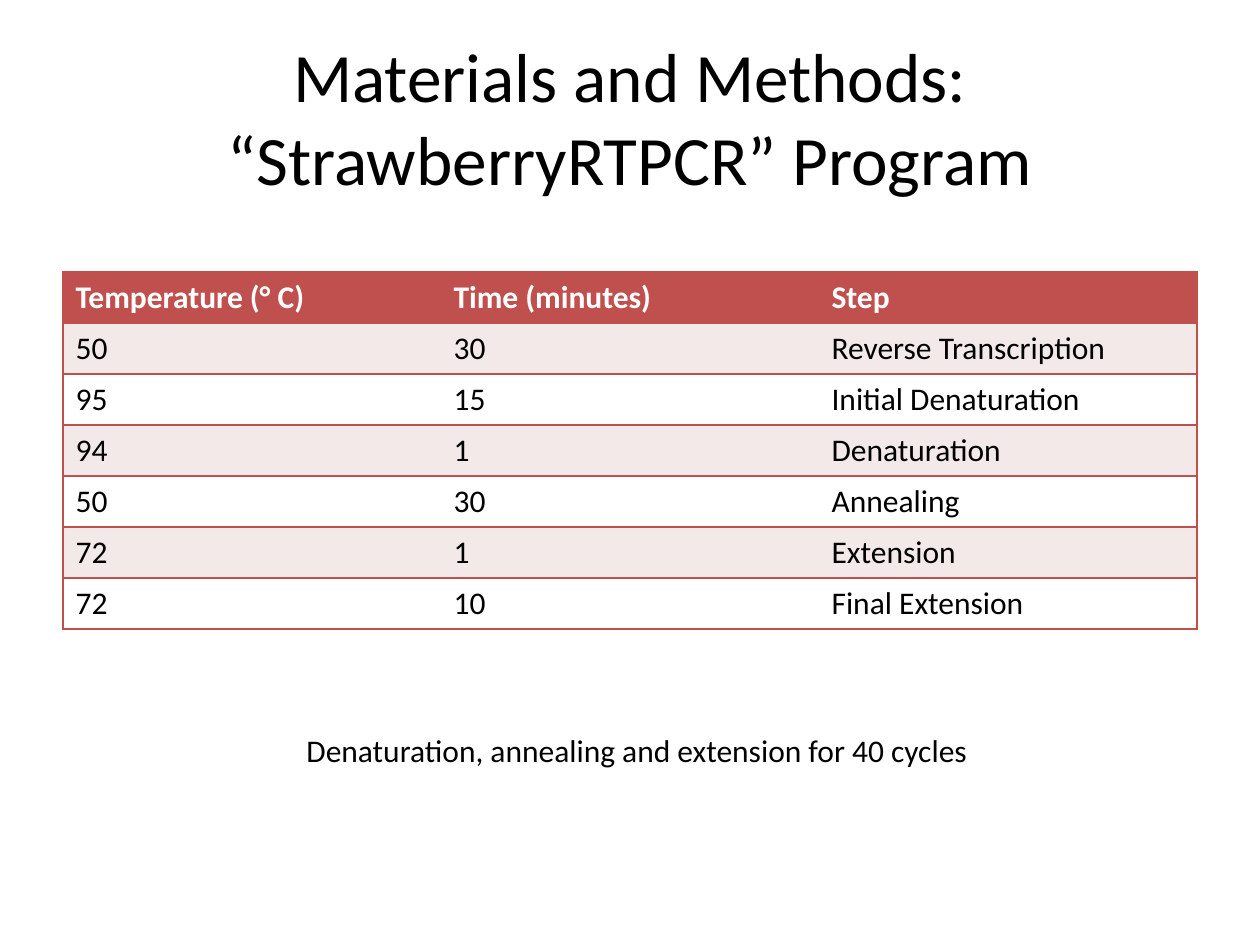
from dataclasses import dataclass

from lxml import etree
from pptx import Presentation
from pptx.dml.color import RGBColor
from pptx.enum.text import MSO_ANCHOR, PP_ALIGN
from pptx.oxml.ns import qn
from pptx.slide import Slide
from pptx.table import _Cell
from pptx.text.text import TextFrame
from pptx.util import Emu, Pt

PIXELS_PER_INCH = 126
FONT_NAME = "Calibri"
BODY_SIZE = 18
BORDER_WIDTH = Pt(1)
LEFT, CENTER = PP_ALIGN.LEFT, PP_ALIGN.CENTER
TOP, MIDDLE = MSO_ANCHOR.TOP, MSO_ANCHOR.MIDDLE

BLACK = RGBColor(0x00, 0x00, 0x00)
WHITE = RGBColor(0xFF, 0xFF, 0xFF)
RED = RGBColor(0xC0, 0x50, 0x4D)
PALE_RED = RGBColor(0xF4, 0xE9, 0xE9)


@dataclass(frozen=True)
class Box:
    left: int
    top: int
    width: int
    height: int


@dataclass(frozen=True)
class Label:
    text: str
    box: Box
    size: float
    alignment: PP_ALIGN
    anchor: MSO_ANCHOR


@dataclass(frozen=True)
class ProgramStep:
    temperature: str
    minutes: str
    name: str


LABELS = [
    Label("Materials and Methods: “StrawberryRTPCR” Program",
          Box(63, 38, 1134, 157), 39.6, CENTER, MIDDLE),
    Label("Denaturation, annealing and extension for 40 cycles",
          Box(294, 725, 966, 51), BODY_SIZE, LEFT, TOP),
]
PROGRAM_BOX = Box(63, 272, 1134, 357)
PROGRAM = [
    ProgramStep("Temperature (° C)", "Time (minutes)", "Step"),
    ProgramStep("50", "30", "Reverse Transcription"),
    ProgramStep("95", "15", "Initial Denaturation"),
    ProgramStep("94", "1", "Denaturation"),
    ProgramStep("50", "30", "Annealing"),
    ProgramStep("72", "1", "Extension"),
    ProgramStep("72", "10", "Final Extension"),
]


def px(length: int) -> Emu:
    return Emu(round(length * 914400 / PIXELS_PER_INCH))


def place(box: Box) -> tuple[Emu, Emu, Emu, Emu]:
    return px(box.left), px(box.top), px(box.width), px(box.height)


def write_text(text_frame: TextFrame, text: str, size: float,
               color: RGBColor, bold: bool = False) -> None:
    text_frame.text = text
    font = text_frame.paragraphs[0].runs[0].font
    font.name = FONT_NAME
    font.size = Pt(size)
    font.bold = bold
    font.color.rgb = color


def add_label(slide: Slide, label: Label) -> None:
    text_frame = slide.shapes.add_textbox(*place(label.box)).text_frame
    text_frame.word_wrap = True
    text_frame.vertical_anchor = label.anchor
    write_text(text_frame, label.text, label.size, BLACK)
    text_frame.paragraphs[0].alignment = label.alignment


def set_borders(cell: _Cell, is_first: bool, is_last: bool) -> None:
    properties = cell._tc.get_or_add_tcPr()
    edges = {"a:lnL": is_first, "a:lnR": is_last, "a:lnT": True, "a:lnB": True}
    for tag, visible in edges.items():
        line = etree.SubElement(properties, qn(tag), w=str(BORDER_WIDTH))
        if visible:
            fill = etree.SubElement(line, qn("a:solidFill"))
            etree.SubElement(fill, qn("a:srgbClr"), val=str(RED))
        else:
            etree.SubElement(line, qn("a:noFill"))


def add_program_table(slide: Slide, steps: list[ProgramStep], box: Box) -> None:
    column_count = 3
    table = slide.shapes.add_table(len(steps), column_count, *place(box)).table
    table.horz_banding = False
    for row_index, step in enumerate(steps):
        is_header = row_index == 0
        fill_color = RED if is_header else PALE_RED if row_index % 2 else WHITE
        text_color = WHITE if is_header else BLACK
        for column, text in enumerate((step.temperature, step.minutes, step.name)):
            cell = table.cell(row_index, column)
            write_text(cell.text_frame, text, BODY_SIZE, text_color, is_header)
            set_borders(cell, column == 0, column == column_count - 1)
            cell.fill.solid()
            cell.fill.fore_color.rgb = fill_color


def main() -> None:
    presentation = Presentation()
    presentation.slide_width = px(1260)
    presentation.slide_height = px(945)
    slide = presentation.slides.add_slide(presentation.slide_layouts[6])
    for label in LABELS:
        add_label(slide, label)
    add_program_table(slide, PROGRAM, PROGRAM_BOX)
    presentation.save("out.pptx")


if __name__ == "__main__":
    main()
